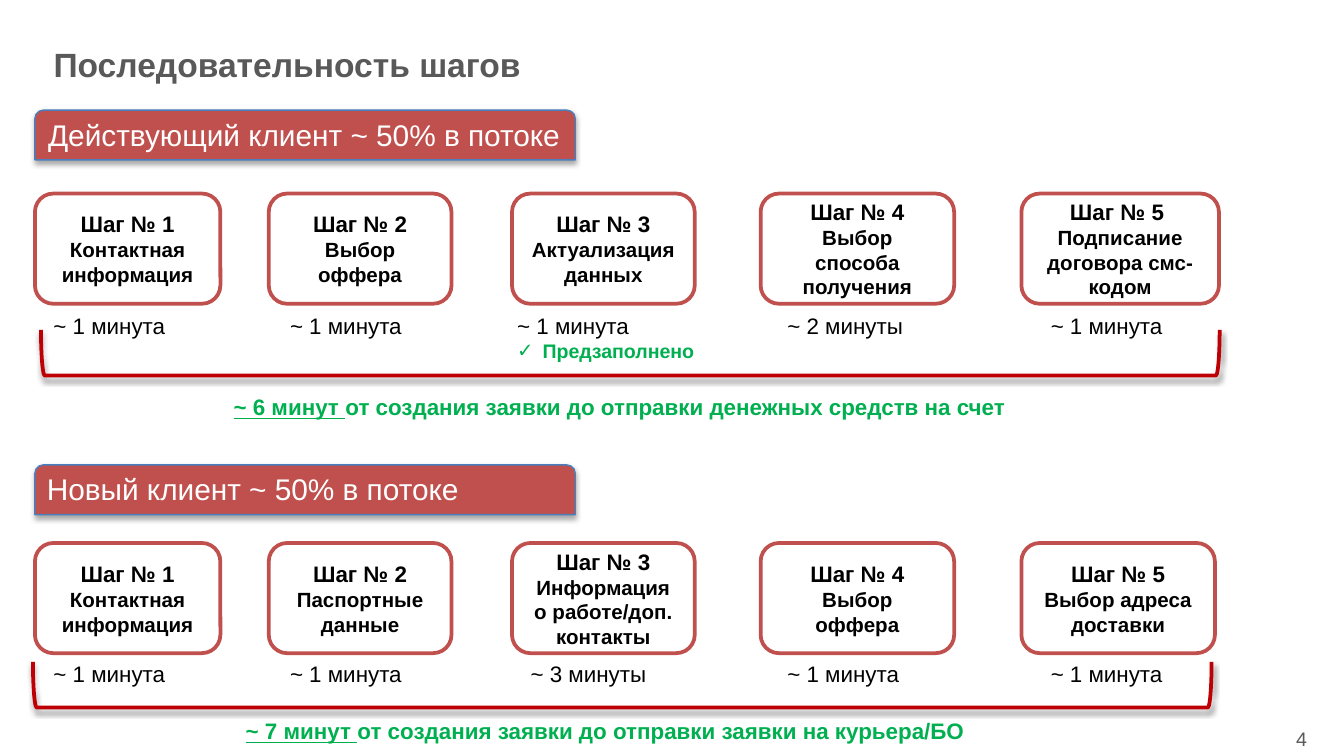
from dataclasses import dataclass

from lxml import etree
from pptx import Presentation
from pptx.dml.color import RGBColor
from pptx.enum.shapes import MSO_SHAPE
from pptx.enum.text import MSO_ANCHOR, PP_ALIGN
from pptx.oxml import parse_xml
from pptx.oxml.ns import nsdecls, qn
from pptx.util import Inches, Pt

ROUND = MSO_SHAPE.ROUNDED_RECTANGLE
TAB = MSO_SHAPE.ROUND_2_SAME_RECTANGLE
BRACKET = MSO_SHAPE.RIGHT_BRACKET
LEFT, CENTER = PP_ALIGN.LEFT, PP_ALIGN.CENTER
TOP, MIDDLE = MSO_ANCHOR.TOP, MSO_ANCHOR.MIDDLE


@dataclass(frozen=True)
class Theme:
    font: str = "Arial"
    black: str = "000000"
    white: str = "FFFFFF"
    grey: str = "595959"
    red: str = "C0504D"
    dark: str = "BE0004"
    blue: str = "4B7EBC"
    green: str = "00B050"
    title: float = 18
    head: float = 16
    body: float = 12
    label: float = 11
    small: float = 10.5


T = Theme()
prs = Presentation()
# Widescreen, 16 to 9
prs.slide_width = Inches(10)
prs.slide_height = Inches(10) * 9 // 16
slide = prs.slides.add_slide(prs.slide_layouts[6])
shapes = slide.shapes


def write(text, on=None, box=None, par=None, size=T.body, color=T.black,
          bold=False, under=False, align=LEFT, anchor=TOP):
    """Add a run to paragraph par, or to a new one in shape on or a new text box."""
    if par is None:
        on = on or shapes.add_textbox(*map(Inches, box))
        frame = on.text_frame
        frame.word_wrap, frame.vertical_anchor = True, anchor
        par = frame.add_paragraph() if frame.text else frame.paragraphs[0]
        par.alignment = align
    run = par.add_run()
    run.text = text
    font = run.font
    font.name, font.size, font.bold = T.font, Pt(size), bold
    font.underline = under
    font.color.rgb = RGBColor.from_string(color)
    return par


def draw(kind, box, line, width, fill=None, shade=None):
    """Add a preset shape; shade is the shadow's opacity in percent and offset in points."""
    shape = shapes.add_shape(kind, *map(Inches, box))
    shape.shadow.inherit = False
    shape.line.color.rgb = RGBColor.from_string(line)
    shape.line.width = Pt(width)
    if fill:
        shape.fill.solid()
        shape.fill.fore_color.rgb = RGBColor.from_string(fill)
    else:
        shape.fill.background()
    if shade:
        alpha, drop = shade
        shape._element.spPr.find(qn("a:effectLst")).append(parse_xml(
            f'<a:outerShdw {nsdecls("a")} blurRad="{Pt(3.1)}" dist="{Pt(drop)}" '
            f'dir="5400000" rotWithShape="0"><a:srgbClr val="{T.black}">'
            f'<a:alpha val="{alpha * 1000}"/></a:srgbClr></a:outerShdw>'))
    return shape


# Title and page number
write("Последовательность шагов", box=(0.3, 0.28, 8.38, 0.39), size=T.title,
      color=T.grey, bold=True, anchor=MIDDLE)
write("4", box=(9.42, 5.36, 0.53, 0.28), size=T.small, color=T.grey, align=CENTER)

# Columns: left edge and width of each step, left edge of its time
cols = [(0.26, 1.38, 0.3), (2, 1.36, 2.06), (3.81, 1.36, 3.85),
        (5.66, 1.44, 5.76), (7.6, 1.44, 7.72)]

# Each flow: heading, steps with times, and total
flows = [
    dict(head="Действующий клиент ~ 50% в потоке", bar=0.82, text=(0.26, 0.82, 4.17, 0.37),
         top=1.44, time=2.27, bracket=(4.52, -1.76),
         steps=[("Контактная информация", "~ 1 минута"),
                ("Выбор оффера", "~ 1 минута"),
                ("Актуализация данных", "~ 1 минута"),
                ("Выбор способа получения", "~ 2 минуты"),
                ("Подписание договора смс-кодом", "~ 1 минута")],
         total="~ 6 минут ", at=(1.64, 2.88),
         rest="от создания заявки до отправки денежных средств на счет"),
    dict(head="Новый клиент ~ 50% в потоке", bar=3.46, text=(0.25, 3.45, 3.62, 0.37),
         top=4.04, time=4.86, bracket=(4.46, 0.71),
         steps=[("Контактная информация", "~ 1 минута"),
                ("Паспортные данные", "~ 1 минута"),
                ("Информация о работе/доп. контакты", "~ 3 минуты"),
                ("Выбор оффера", "~ 1 минута"),
                ("Выбор адреса доставки", "~ 1 минута")],
         total="~ 7 минут ", at=(1.73, 5.29),
         rest="от создания заявки до отправки заявки на курьера/БО"),
]

for flow in flows:
    # Heading bar
    draw(TAB, (0.26, flow["bar"], 4.02, 0.37), T.blue, 0.75, T.red, (35, 1.8))
    write(flow["head"], box=flow["text"], size=T.head, color=T.white)

    # Steps and their times
    for num, ((x, wide, left), (name, time)) in enumerate(zip(cols, flow["steps"]), 1):
        sign = name.startswith("Подписание")
        step = draw(ROUND, (x, flow["top"], 1.47 if sign else wide, 0.82),
                    T.red, 2, T.white)
        # The first three names run on from the step number
        joined = num < 4
        gap = " " if joined or sign else ""
        par = write(f"Шаг № {num}{gap}", on=step, bold=True, align=CENTER, anchor=MIDDLE)
        write(name, on=step, par=par if joined else None, size=T.label, bold=True,
              align=CENTER, anchor=MIDDLE)

        if name.startswith("Актуализация"):
            # Time with a check-marked note
            note = shapes.add_textbox(*map(Inches, (3.75, flow["time"], 1.54, 0.48)))
            write(time, on=note)
            par = write("Предзаполнено", on=note, size=T.small, color=T.green, bold=True)
            props = par._p.get_or_add_pPr()
            props.set("marL", str(Inches(0.19)))
            props.set("indent", str(-Inches(0.19)))
            etree.SubElement(props, qn("a:buFont")).set("typeface", T.font)
            etree.SubElement(props, qn("a:buChar")).set("char", "✓")
        else:
            write(time, box=(left, flow["time"], 1.23, 0.3))

    # Bracket and total
    brace = draw(BRACKET, (*flow["bracket"], 0.34, 8.77), T.dark, 2, shade=(38, 1.6))
    brace.rotation = 90
    par = write(flow["total"], box=(*flow["at"], 6.56, 0.3), color=T.green,
                bold=True, under=True)
    write(flow["rest"], par=par, color=T.green, bold=True)

prs.save("out.pptx")
